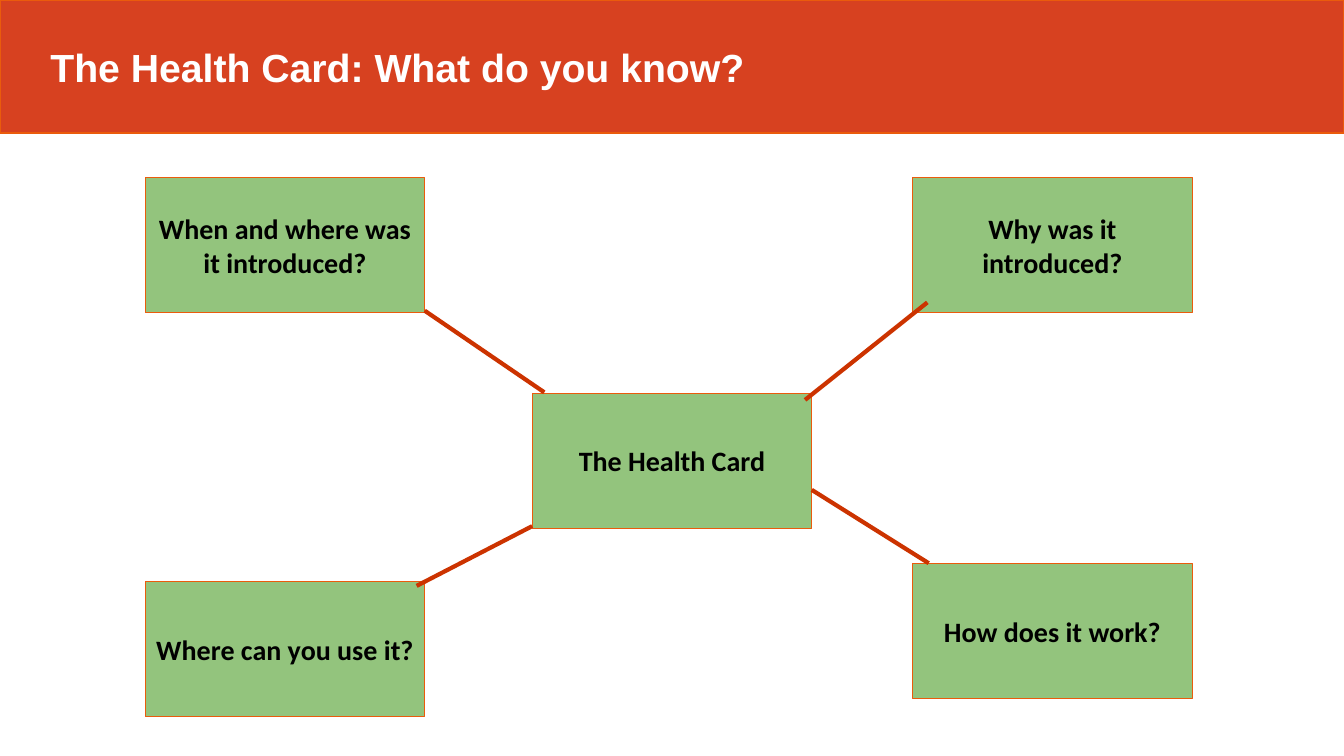
import dataclasses

import pptx
import pptx.dml.color
import pptx.enum.shapes
import pptx.enum.text
import pptx.oxml.ns
import pptx.util


@dataclasses.dataclass(frozen=True)
class Theme:
    banner: str = "D74120"
    outline: str = "EA5B0C"
    card: str = "93C47D"
    spoke: str = "CC3300"
    light: str = "FFFFFF"
    dark: str = "000000"
    title_font: str = "Arial"
    card_font: str = "Calibri"
    title_size: int = 28
    card_size: int = 20


THEME = Theme()
WIDTH, HEIGHT = pptx.util.Inches(13.33), pptx.util.Inches(7.5)

# Places are percentages of the slide's width and height.
LEFT, CENTRE, RIGHT = 10.8, 39.6, 67.9
CARD_WIDTH, CARD_HEIGHT = 20.8, 17.9
BANNER_HEIGHT = 17.6
CARDS = [
    ("The Health Card", CENTRE, 52),
    ("How does it work?", RIGHT, 74.5),
    ("Where can you use it?", LEFT, 76.9),
    ("Why was it introduced?", RIGHT, 23.5),
    ("When and where was it introduced?", LEFT, 23.5),
]
SPOKES = [
    ((31.6, 41.1), (40.5, 51.9)),
    ((60.4, 64.8), (69.1, 74.5)),
    ((31, 77.5), (39.6, 69.6)),
    ((69, 40), (59.9, 52.9)),
]


def across(percent):
    return round(WIDTH * percent / 100)


def down(percent):
    return round(HEIGHT * percent / 100)


def rgb(code):
    return pptx.dml.color.RGBColor.from_string(code)


def paint(shape, fill, line_width):
    shape.fill.solid()
    shape.fill.fore_color.rgb = rgb(fill)
    shape.line.color.rgb = rgb(THEME.outline)
    shape.line.width = pptx.util.Pt(line_width)


def write(shape, text, font, size, color, align):
    """Put one bold line of text, centred vertically, into a shape."""
    frame = shape.text_frame
    frame.word_wrap = True
    frame.auto_size = pptx.enum.text.MSO_AUTO_SIZE.NONE
    frame.vertical_anchor = pptx.enum.text.MSO_ANCHOR.MIDDLE
    para = frame.paragraphs[0]
    para.alignment = align
    span = para.add_run()
    span.text = text
    span.font.name = font
    span.font.size = pptx.util.Pt(size)
    span.font.bold = True
    span.font.color.rgb = rgb(color)


def set_title(page, text):
    title = page.shapes.title
    title.left, title.top = 0, 0
    title.width, title.height = WIDTH, down(BANNER_HEIGHT)
    paint(title, THEME.banner, 1)
    write(title, text, THEME.title_font, THEME.title_size, THEME.light,
          pptx.enum.text.PP_ALIGN.LEFT)
    title.text_frame.margin_left = pptx.util.Inches(0.5)


def add_card(page, text, left, top):
    card = page.shapes.add_shape(
        pptx.enum.shapes.MSO_SHAPE.RECTANGLE,
        across(left), down(top), across(CARD_WIDTH), down(CARD_HEIGHT))
    card.shadow.inherit = False
    paint(card, THEME.card, 0.75)
    write(card, text, THEME.card_font, THEME.card_size, THEME.dark,
          pptx.enum.text.PP_ALIGN.CENTER)
    frame = card.text_frame
    frame.margin_top = frame.margin_bottom = pptx.util.Inches(0.1)


def add_spoke(page, start, end):
    spoke = page.shapes.add_connector(
        pptx.enum.shapes.MSO_CONNECTOR.STRAIGHT,
        across(start[0]), down(start[1]), across(end[0]), down(end[1]))
    spoke.line.color.rgb = rgb(THEME.spoke)
    spoke.line.width = pptx.util.Pt(3)
    properties = spoke._element.spPr
    properties.append(properties.makeelement(
        pptx.oxml.ns.qn("a:effectLst"), {}))


def main():
    deck = pptx.Presentation()
    deck.slide_width, deck.slide_height = WIDTH, HEIGHT
    page = deck.slides.add_slide(deck.slide_layouts.get_by_name("Title Only"))
    set_title(page, "The Health Card: What do you know?")
    for text, left, top in CARDS:
        add_card(page, text, left, top)
    for start, end in SPOKES:
        add_spoke(page, start, end)
    deck.save("out.pptx")


if __name__ == "__main__":
    main()
